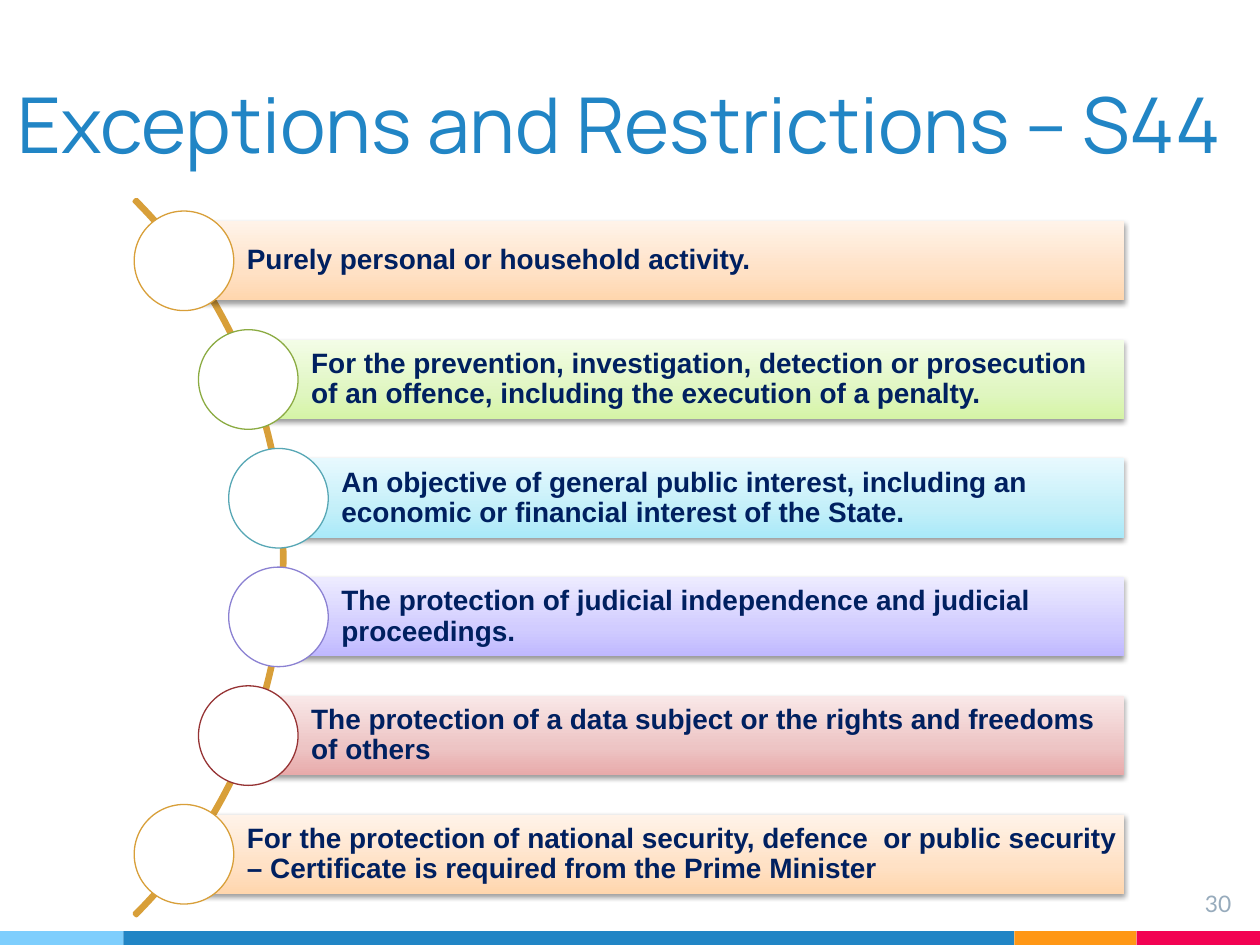
from pptx import Presentation
from pptx.dml.color import RGBColor
from pptx.enum.shapes import MSO_SHAPE
from pptx.enum.text import MSO_ANCHOR, PP_ALIGN
from pptx.oxml import parse_xml
from pptx.oxml.ns import nsdecls
from pptx.util import Inches, Pt

RECT, OVAL, BLOCK_ARC = MSO_SHAPE.RECTANGLE, MSO_SHAPE.OVAL, MSO_SHAPE.BLOCK_ARC
TOP, MIDDLE, BOTTOM = MSO_ANCHOR.TOP, MSO_ANCHOR.MIDDLE, MSO_ANCHOR.BOTTOM
LEFT, RIGHT, JUSTIFY = PP_ALIGN.LEFT, PP_ALIGN.RIGHT, PP_ALIGN.JUSTIFY

WHITE = RGBColor(0xFF, 0xFF, 0xFF)
BLUE = RGBColor(0x21, 0x85, 0xC5)
SKY = RGBColor(0x7E, 0xCE, 0xFD)
ORANGE = RGBColor(0xFF, 0x97, 0x15)
PINK = RGBColor(0xF2, 0x02, 0x53)
GREY = RGBColor(0x97, 0xAB, 0xBC)
NAVY = RGBColor(0x00, 0x20, 0x60)
GOLD = RGBColor(0xD8, 0x9F, 0x39)
GREEN = RGBColor(0x8B, 0xAB, 0x42)
TEAL = RGBColor(0x57, 0xA7, 0xB5)
PURPLE = RGBColor(0x8B, 0x81, 0xD2)
RED = RGBColor(0x96, 0x33, 0x34)

TITLE = "Exceptions and Restrictions – S44"
PAGE = "30"
TINTS = {
    GOLD: ("FFD6AD", "FFE1C5", "FFF3E9"),
    GREEN: ("D5F4A6", "E0F6C1", "F3FDE7"),
    TEAL: ("A9E9F9", "C3EFF9", "E7F9FE"),
    PURPLE: ("BFB8FF", "D1CCFF", "EDEBFF"),
    RED: ("E8AAAA", "EDC4C4", "F9E8E8"),
}
ITEMS = [
    ("Purely personal or household activity.", GOLD),
    ("For the prevention, investigation, detection or prosecution of an offence, "
     "including the execution of a penalty.", GREEN),
    ("An objective of general public interest, including an economic or financial "
     "interest of the State.", TEAL),
    ("The protection of judicial independence and judicial proceedings.", PURPLE),
    ("The protection of a data subject or the rights and freedoms of others", RED),
    ("For the protection of national security, defence  or public security – "
     "Certificate is required from the Prime Minister", GOLD),
]
FOOTER = [(SKY, 0.98), (BLUE, 7.07), (ORANGE, 0.97), (PINK, 0.98)]

SLIDE_W, SLIDE_H = 10, 7.5
FOOTER_H = 0.11
FIRST_Y, ROW_PITCH = 2.07, 0.942
BAR_H, BAR_RIGHT = 0.63, 8.92
CIRCLE = 0.79
CENTRES_X = [1.46, 1.97, 2.21]
CENTRES_X += CENTRES_X[::-1]
ARC_SIZE, ARC_RIGHT = 8.04, 2.26


def add_shape(slide, kind, x, y, w, h, fill=None, line=None, width=0.75):
    s = slide.shapes.add_shape(kind, Inches(x), Inches(y), Inches(w), Inches(h))
    s.shadow.inherit = False
    if fill is None:
        s.fill.background()
    else:
        s.fill.solid()
        s.fill.fore_color.rgb = fill
    if line is None:
        s.line.fill.background()
    else:
        s.line.color.rgb = line
        s.line.width = Pt(width)
    return s


def set_text(s, text, font, size, color, align, anchor, insets, bold=False):
    tf = s.text_frame
    tf.word_wrap = True
    tf.vertical_anchor = anchor
    tf.margin_left, tf.margin_top, tf.margin_right, tf.margin_bottom = map(Inches, insets)
    tf.text = text
    p = tf.paragraphs[0]
    p.alignment = align
    f = p.runs[0].font
    f.name, f.size, f.bold = font, Pt(size), bold
    f.color.rgb = color
    return p


def add_label(slide, x, y, w, h, *style):
    tb = slide.shapes.add_textbox(Inches(x), Inches(y), Inches(w), Inches(h))
    return set_text(tb, *style, (0.1,) * 4)


def shade(s, tints):
    stops = "".join(
        f'<a:gs pos="{pos}"><a:srgbClr val="{tint}"/></a:gs>'
        for pos, tint in zip((0, 35000, 100000), tints))
    sp_pr = s.fill._xPr
    sp_pr.replace(sp_pr.find("{*}noFill"), parse_xml(
        f'<a:gradFill {nsdecls("a")} rotWithShape="1"><a:gsLst>{stops}</a:gsLst>'
        '<a:lin ang="16200000" scaled="0"/></a:gradFill>'))
    sp_pr.find("{*}effectLst").append(parse_xml(
        f'<a:outerShdw {nsdecls("a")} blurRad="{Pt(3.1)}" dist="{Pt(1.6)}" dir="5400000" '
        'rotWithShape="0"><a:srgbClr val="000000"><a:alpha val="38000"/></a:srgbClr>'
        '</a:outerShdw>'))


def add_item(slide, text, color, cx, cy):
    bar = add_shape(slide, RECT, cx, cy - BAR_H / 2, BAR_RIGHT - cx, BAR_H)
    shade(bar, TINTS[color])
    p = set_text(bar, text, "Arial", 16, NAVY, LEFT, MIDDLE, (0.5, 0.04, 0.04, 0.04), True)
    p.line_spacing = 0.9
    add_shape(slide, OVAL, cx - CIRCLE / 2, cy - CIRCLE / 2, CIRCLE, CIRCLE, WHITE, color)


def main():
    prs = Presentation()
    prs.slide_width, prs.slide_height = Inches(SLIDE_W), Inches(SLIDE_H)
    slide = prs.slides.add_slide(prs.slide_layouts[6])

    x = 0
    for color, w in FOOTER:
        add_shape(slide, RECT, x, SLIDE_H - FOOTER_H, w, FOOTER_H, color)
        x += w

    p = add_label(slide, 0, 0.25, 9.85, 1.19, TITLE, "Manrope", 44, BLUE, JUSTIFY, BOTTOM)
    p._p.get_or_add_pPr().set("marL", str(Inches(0.04)))
    add_label(slide, 9.27, 6.96, 0.6, 0.46, PAGE, "Lato", 13, GREY, RIGHT, TOP)

    mid_y = FIRST_Y + ROW_PITCH * (len(ITEMS) - 1) / 2
    arc = add_shape(slide, BLOCK_ARC, ARC_RIGHT - ARC_SIZE, mid_y - ARC_SIZE / 2,
                    ARC_SIZE, ARC_SIZE, line=GOLD, width=2)
    for i, value in enumerate((189, 27, 0.003)):
        arc.adjustments[i] = value

    for i, ((text, color), cx) in enumerate(zip(ITEMS, CENTRES_X)):
        add_item(slide, text, color, cx, FIRST_Y + i * ROW_PITCH)

    prs.save("out.pptx")


if __name__ == "__main__":
    main()
